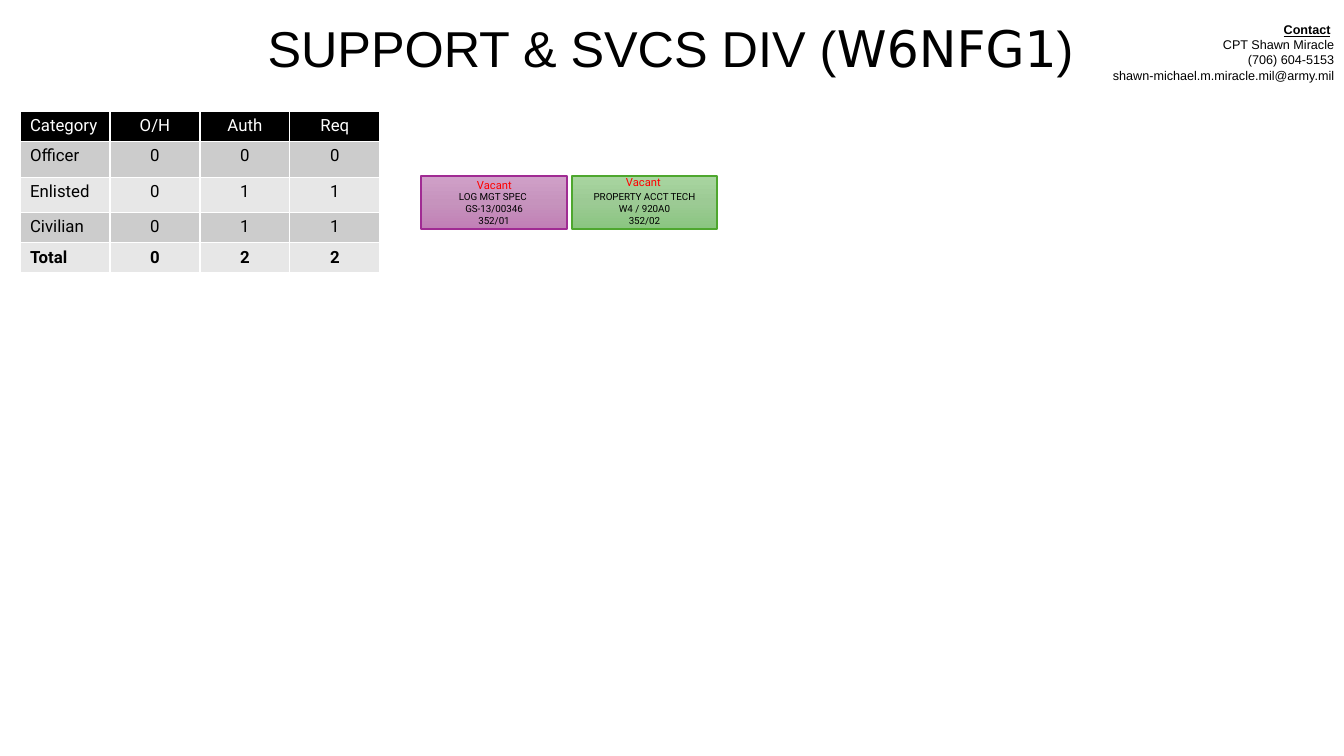
from copy import deepcopy

from lxml.etree import fromstring
from pptx import Presentation
from pptx.dml.color import RGBColor
from pptx.enum.shapes import MSO_SHAPE
from pptx.enum.text import MSO_ANCHOR, PP_ALIGN
from pptx.oxml.ns import nsdecls, qn
from pptx.util import Emu, Pt

EMU_PER_PIXEL = 914400 / 100.8
BLACK = RGBColor(0x00, 0x00, 0x00)
WHITE = RGBColor(0xFF, 0xFF, 0xFF)
RED = RGBColor(0xFF, 0x00, 0x00)
DARK_BAND = RGBColor(0xCC, 0xCC, 0xCC)
LIGHT_BAND = RGBColor(0xE7, 0xE7, 0xE7)
PURPLE_LINE = RGBColor(0xA0, 0x2B, 0x93)
GREEN_LINE = RGBColor(0x4E, 0xA7, 0x2E)
PURPLE_STOPS = [RGBColor(0xD0, 0xA0, 0xC8), RGBColor(0xC6, 0x93, 0xBD), RGBColor(0xC1, 0x7F, 0xB6)]
GREEN_STOPS = [RGBColor(0xA8, 0xD5, 0xA0), RGBColor(0x9C, 0xCA, 0x94), RGBColor(0x8A, 0xC6, 0x80)]

STRENGTH_ROWS = [
    ("Category", "O/H", "Auth", "Req"),
    ("Officer", "0", "0", "0"),
    ("Enlisted", "0", "1", "1"),
    ("Civilian", "0", "1", "1"),
    ("Total", "0", "2", "2"),
]
ROW_HEIGHTS = [30, 36, 35, 30, 30]
COLUMN_WIDTH = 90


def px(length):
    return Emu(round(length * EMU_PER_PIXEL))


def box(*lengths):
    return [px(length) for length in lengths]


def add_text(paragraph, text, font="Roboto", size=12, color=BLACK, bold=False,
             underline=False, align=PP_ALIGN.LEFT):
    paragraph.alignment = align
    run = paragraph.add_run()
    run.text = text
    run.font.name = font
    run.font.size = Pt(size)
    run.font.color.rgb = color
    run.font.bold = bold
    run.font.underline = underline


def add_lines(text_frame, lines, **text_format):
    for index, line in enumerate(lines):
        paragraph = text_frame.paragraphs[0] if index == 0 else text_frame.add_paragraph()
        add_text(paragraph, line, **text_format)


def add_text_box(slide, left, top, width, height, wrap=True):
    text_frame = slide.shapes.add_textbox(*box(left, top, width, height)).text_frame
    text_frame.word_wrap = wrap
    return text_frame


def add_title(slide):
    paragraph = add_text_box(slide, 0, 12, 1341, 72).paragraphs[0]
    for text, font in (("SUPPORT & SVCS DIV (", "Arial"), ("W6NFG1", "DejaVu Sans"), (")", "Arial")):
        add_text(paragraph, text, font=font, size=36, align=PP_ALIGN.CENTER)


def add_contact(slide):
    text_frame = add_text_box(slide, 672, 17, 672, 72)
    contact_format = dict(font="Arial", size=9, align=PP_ALIGN.RIGHT)
    heading = text_frame.paragraphs[0]
    add_text(heading, "Contact", bold=True, underline=True, **contact_format)
    add_text(heading, " ", **contact_format)
    for line in ("CPT Shawn Miracle", "(706) 604-5153", "shawn-michael.m.miracle.mil@army.mil"):
        add_text(text_frame.add_paragraph(), line, **contact_format)


def set_borders(cell):
    properties = cell._tc.get_or_add_tcPr()
    for index, side in enumerate("LRTB"):
        properties.insert(index, fromstring(
            f'<a:ln{side} {nsdecls("a")} w="{Pt(1)}"><a:solidFill>'
            f'<a:srgbClr val="{WHITE}"/></a:solidFill></a:ln{side}>'))


def add_strength_table(slide):
    row_count, column_count = len(STRENGTH_ROWS), len(STRENGTH_ROWS[0])
    table = slide.shapes.add_table(
        row_count, column_count,
        *box(20, 111, COLUMN_WIDTH * column_count, sum(ROW_HEIGHTS))).table
    for column in table.columns:
        column.width = px(COLUMN_WIDTH)
    for row_index, values in enumerate(STRENGTH_ROWS):
        table.rows[row_index].height = px(ROW_HEIGHTS[row_index])
        is_header = row_index == 0
        band = DARK_BAND if row_index % 2 else LIGHT_BAND
        for column_index, value in enumerate(values):
            cell = table.cell(row_index, column_index)
            cell.fill.solid()
            cell.fill.fore_color.rgb = BLACK if is_header else band
            set_borders(cell)
            add_text(cell.text_frame.paragraphs[0], value,
                     color=WHITE if is_header else BLACK,
                     bold=row_index == row_count - 1,
                     align=PP_ALIGN.CENTER if column_index else PP_ALIGN.LEFT)


def set_gradient(shape, colors):
    shape.fill.gradient()
    shape.fill.gradient_angle = 270
    stop_list = shape._element.spPr.find(qn("a:gradFill")).find(qn("a:gsLst"))
    stop_list.append(deepcopy(stop_list[0]))
    for index, (stop, color) in enumerate(zip(shape.fill.gradient_stops, colors)):
        stop.position = index / 2
        stop.color.rgb = color


def add_position(slide, left, width, stops, line_color, lines, vacant_left, vacant_top):
    shape = slide.shapes.add_shape(MSO_SHAPE.RECTANGLE, *box(left, 176, width, 53))
    shape.shadow.inherit = False
    set_gradient(shape, stops)
    shape.line.color.rgb = line_color
    shape.line.width = Pt(1)
    text_frame = shape.text_frame
    text_frame.word_wrap = True
    text_frame.vertical_anchor = MSO_ANCHOR.MIDDLE
    text_frame.margin_top = px(12)
    text_frame.margin_bottom = 0
    add_lines(text_frame, lines, size=7, align=PP_ALIGN.CENTER)
    vacant = add_text_box(slide, vacant_left, vacant_top, 54, 24, wrap=False)
    vacant.margin_right = 0
    add_text(vacant.paragraphs[0], "Vacant", size=8, color=RED)


def main():
    presentation = Presentation()
    presentation.slide_width = px(1344)
    presentation.slide_height = px(756)
    slide = presentation.slides.add_slide(presentation.slide_layouts[6])
    add_title(slide)
    add_contact(slide)
    add_strength_table(slide)
    add_position(slide, 421, 146, PURPLE_STOPS, PURPLE_LINE,
                 ("LOG MGT SPEC ", "GS-13/00346", "352/01"), 467, 173)
    add_position(slide, 572, 145, GREEN_STOPS, GREEN_LINE,
                 ("PROPERTY ACCT TECH", "W4 / 920A0", "352/02"), 616, 170)
    presentation.save("out.pptx")


if __name__ == "__main__":
    main()
